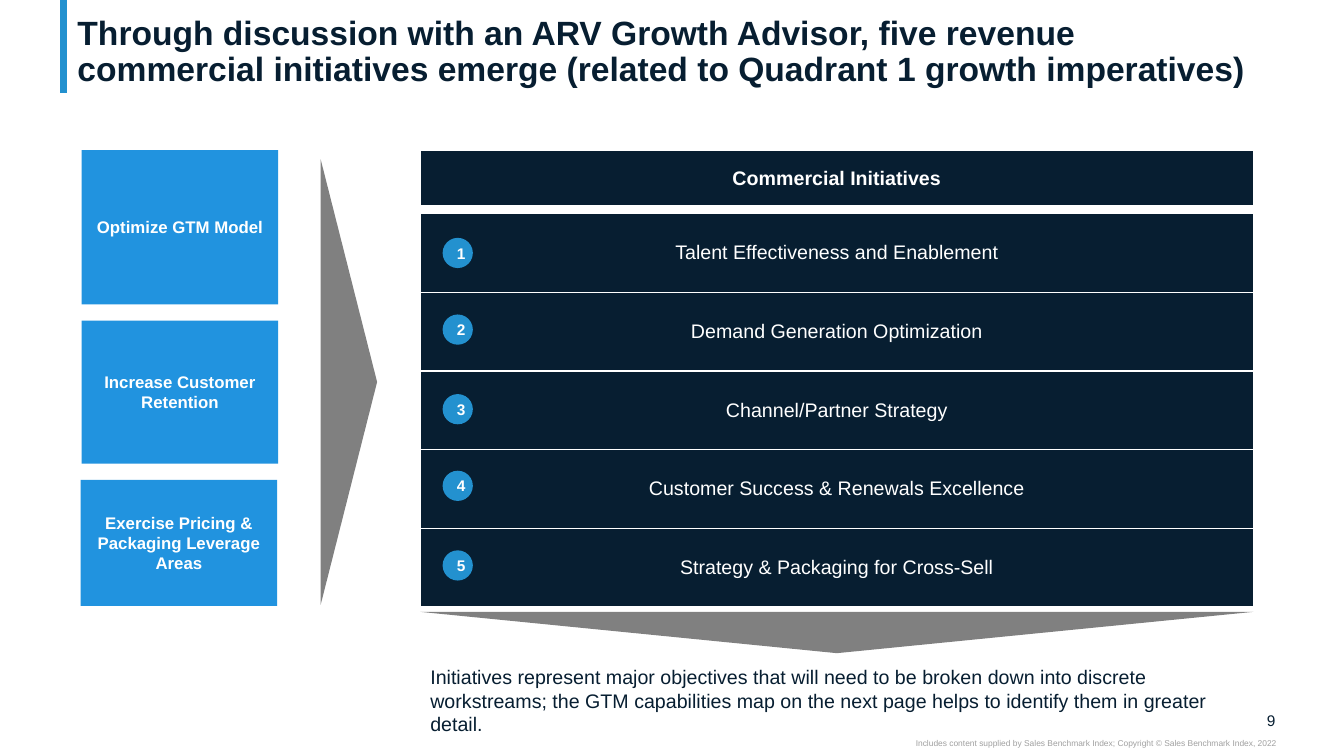
from dataclasses import dataclass

from lxml import etree
from pptx import Presentation
from pptx.dml.color import RGBColor
from pptx.enum.shapes import MSO_CONNECTOR, MSO_SHAPE
from pptx.enum.text import MSO_ANCHOR, PP_ALIGN
from pptx.oxml.ns import qn
from pptx.util import Inches, Pt

RECTANGLE = MSO_SHAPE.RECTANGLE
OVAL = MSO_SHAPE.OVAL
TRIANGLE = MSO_SHAPE.ISOSCELES_TRIANGLE
STRAIGHT = MSO_CONNECTOR.STRAIGHT
TOP, MIDDLE, BOTTOM = MSO_ANCHOR.TOP, MSO_ANCHOR.MIDDLE, MSO_ANCHOR.BOTTOM
LEFT, CENTER, RIGHT = PP_ALIGN.LEFT, PP_ALIGN.CENTER, PP_ALIGN.RIGHT

IMPERATIVES = [
    ("Optimize GTM Model", 0.81, 1.49, 1.53),
    ("Increase Customer Retention", 0.81, 3.18, 1.42),
    ("Exercise Pricing & Packaging Leverage Areas", 0.8, 4.76, 1.25),
]
INITIATIVES = [
    "Talent Effectiveness and Enablement",
    "Demand Generation Optimization",
    "Channel/Partner Strategy",
    "Customer Success & Renewals Excellence",
    "Strategy & Packaging for Cross-Sell",
]
BADGE_TOPS = [2.36, 3.12, 3.91, 4.67, 5.46]
PANEL_LEFT, PANEL_WIDTH = 4.17, 8.26


@dataclass(frozen=True)
class Theme:
    """Colours, font and type sizes of the slide."""

    font: str = "Arial"
    navy: str = "071E31"
    blue: str = "2193DF"
    accent: str = "2391CF"
    grey: str = "808080"
    pale: str = "A0A0A0"
    white: str = "FFFFFF"
    title: int = 24
    body: int = 14
    label: int = 12
    small: int = 11
    footer: int = 6


class SlideBuilder:
    """Draws styled elements on one slide."""

    def __init__(self, slide, theme):
        self.shapes = slide.shapes
        self.theme = theme

    def set_text(self, frame, text, size, color, bold=False, align=CENTER):
        """Fill a text frame with one formatted paragraph."""
        frame.text = text
        frame.word_wrap = True
        paragraph = frame.paragraphs[0]
        paragraph.alignment = align
        for run in paragraph.runs:
            run.font.name = self.theme.font
            run.font.size = Pt(size)
            run.font.bold = bold
            run.font.color.rgb = RGBColor.from_string(color)
        return paragraph

    def text(self, box, text, size, color, bold=False, align=LEFT,
             anchor=TOP, insets=(0.1, 0.05)):
        """Add a text box and return its paragraph."""
        frame = self.shapes.add_textbox(*map(Inches, box)).text_frame
        frame.vertical_anchor = anchor
        frame.margin_left = frame.margin_right = Inches(insets[0])
        frame.margin_top = frame.margin_bottom = Inches(insets[1])
        return self.set_text(frame, text, size, color, bold, align)

    def shape(self, kind, box, fill, rotation=0):
        """Add a plain filled shape without outline."""
        shape = self.shapes.add_shape(kind, *map(Inches, box))
        shape.shadow.inherit = False
        shape.fill.solid()
        shape.fill.fore_color.rgb = RGBColor.from_string(fill)
        shape.line.fill.background()
        shape.rotation = rotation
        return shape

    def label(self, kind, box, fill, text, size, inset=0.05):
        """Add a filled shape with a bold white caption."""
        frame = self.shape(kind, box, fill).text_frame
        frame.vertical_anchor = MIDDLE
        frame.margin_top = frame.margin_bottom = Inches(inset)
        self.set_text(frame, text, size, self.theme.white, bold=True)

    def line(self, start, end, color, width):
        """Add a straight line."""
        connector = self.shapes.add_connector(
            STRAIGHT, *map(Inches, start + end))
        connector.line.color.rgb = RGBColor.from_string(color)
        connector.line.width = Pt(width)
        properties = connector._element.spPr
        etree.SubElement(properties, qn("a:effectLst"))

    def border(self, cell, bottom):
        """Give a cell white borders, with its own bottom width."""
        properties = cell._tc.get_or_add_tcPr()
        widths = {"a:lnL": 1, "a:lnR": 1, "a:lnT": 1, "a:lnB": bottom}
        for index, (tag, width) in enumerate(widths.items()):
            edge = etree.Element(qn(tag), w=str(Pt(width)))
            fill = etree.SubElement(edge, qn("a:solidFill"))
            etree.SubElement(fill, qn("a:srgbClr"), val=self.theme.white)
            properties.insert(index, edge)

    def table(self, top, row_height, rows, bold=False, bottom=1):
        """Add a one-column navy table."""
        box = (PANEL_LEFT, top, PANEL_WIDTH, row_height * len(rows))
        table = self.shapes.add_table(len(rows), 1, *map(Inches, box)).table
        table.first_row = table.horz_banding = False
        for index, text in enumerate(rows):
            table.rows[index].height = Inches(row_height)
            cell = table.cell(index, 0)
            cell.fill.solid()
            cell.fill.fore_color.rgb = RGBColor.from_string(self.theme.navy)
            cell.vertical_anchor = MIDDLE
            self.set_text(cell.text_frame, text, self.theme.body,
                          self.theme.white, bold)
            self.border(cell, bottom)


def main():
    """Build and save the slide."""
    presentation = Presentation()
    presentation.slide_width = Inches(13.33)
    presentation.slide_height = Inches(7.5)
    slide = presentation.slides.add_slide(presentation.slide_layouts[6])
    theme = Theme()
    builder = SlideBuilder(slide, theme)

    builder.line((0.63, 0), (0.63, 0.92), theme.accent, 5)
    builder.text((12.32, 7.05, 0.33, 0.19), "9", theme.small, theme.navy,
                 align=RIGHT, anchor=MIDDLE, insets=(0, 0))
    builder.text(
        (7.5, 7.32, 5.16, 0.1),
        "Includes content supplied by Sales Benchmark Index; "
        "Copyright © Sales Benchmark Index, 2022",
        theme.footer, theme.pale, align=RIGHT, insets=(0, 0))
    title = builder.text(
        (0.67, 0.04, 11.99, 0.84),
        "Through discussion with an ARV Growth Advisor, five revenue "
        "commercial initiatives emerge (related to Quadrant 1 growth "
        "imperatives)",
        theme.title, theme.navy, bold=True, anchor=BOTTOM, insets=(0.1, 0))
    title.line_spacing = 0.9

    for text, left, top, height in IMPERATIVES:
        builder.label(RECTANGLE, (left, top, 1.95, height), theme.blue,
                      text, theme.label)

    builder.table(1.49, 0.56, ["Commercial Initiatives"], bold=True, bottom=3)
    builder.shape(TRIANGLE, (1.25, 3.51, 4.42, 0.56), theme.grey, 90)
    builder.shape(TRIANGLE, (PANEL_LEFT, 6.07, PANEL_WIDTH, 0.41),
                  theme.grey, 180)
    builder.text(
        (PANEL_LEFT, 6.55, PANEL_WIDTH, 0.57),
        "Initiatives represent major objectives that will need to be broken "
        "down into discrete workstreams; the GTM capabilities map on the "
        "next page helps to identify them in greater detail.",
        theme.body, theme.navy)

    builder.table(2.12, 0.78, INITIATIVES)
    for number, top in enumerate(BADGE_TOPS, start=1):
        builder.label(OVAL, (4.39, top, 0.3, 0.3), theme.accent,
                      str(number), theme.small, inset=0.1)

    presentation.save("out.pptx")


if __name__ == "__main__":
    main()
